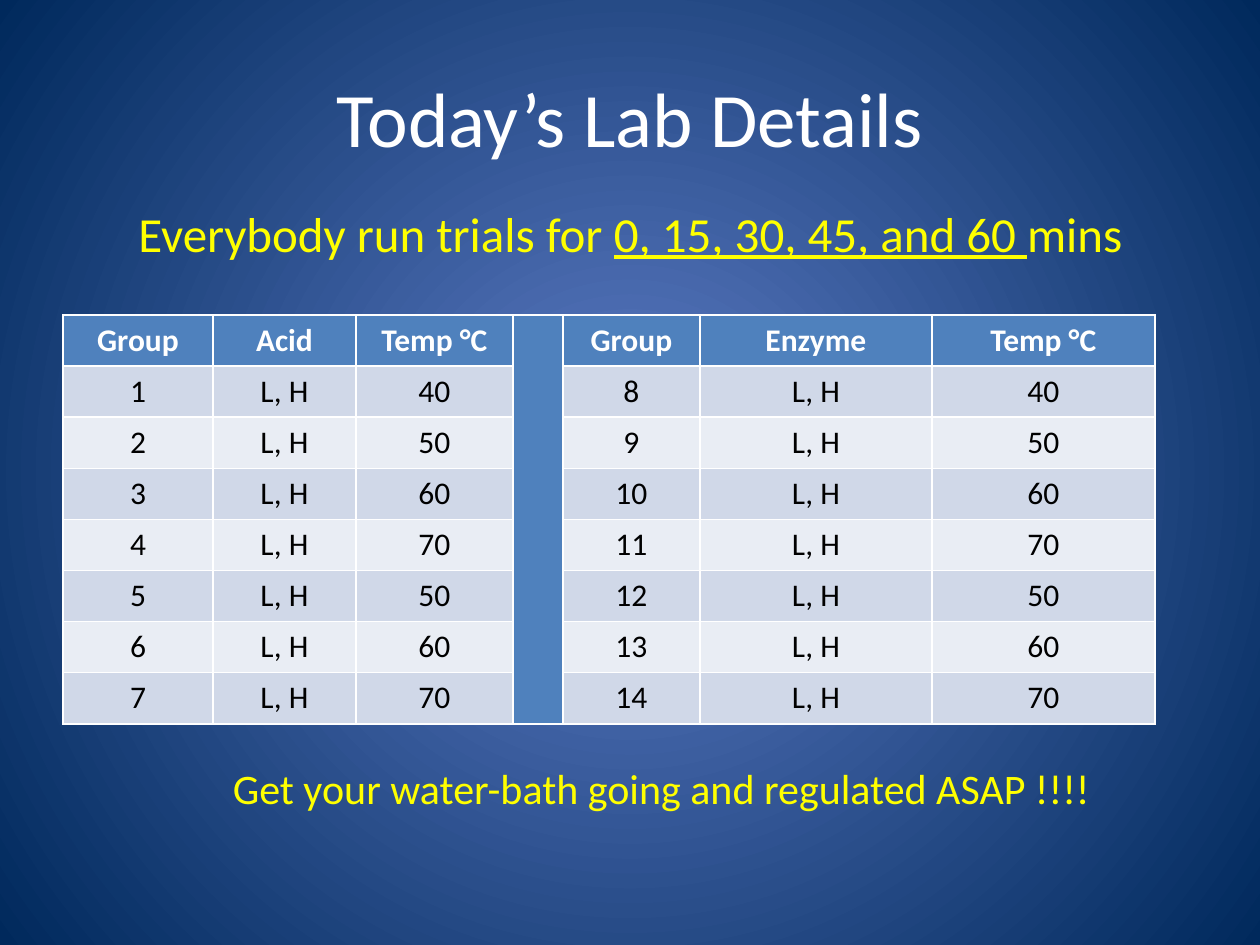
"""Build the lab details slide with its group table and two reminders."""
from lxml import etree
from pptx import Presentation
from pptx import util as u
from pptx.dml.color import RGBColor
from pptx.enum import text
from pptx.oxml import ns

WHITE = RGBColor(0xFF, 0xFF, 0xFF)
BLACK = RGBColor(0x00, 0x00, 0x00)
YELLOW = RGBColor(0xFF, 0xFF, 0x00)
HEADER_BLUE = RGBColor(0x4F, 0x81, 0xBD)
BANDS = (RGBColor(0xD0, 0xD8, 0xE8), RGBColor(0xE9, 0xED, 0xF4))
GLOW = (RGBColor(0x5E, 0x7C, 0xC5), RGBColor(0x00, 0x29, 0x5C))

TITLE = "Today’s Lab Details"
HEADERS = ("Group", "Acid", "Temp °C", "", "Group", "Enzyme", "Temp °C")
TEMPERATURES = (40, 50, 60, 70, 50, 60, 70)
SAMPLES = "L, H"
DIVIDER = HEADERS.index("")
COLUMN_WIDTHS = (85.7, 81.7, 89.7, 28.6, 78.3, 132.6, 127.4)
ROW_HEIGHT = 29.16
REMINDERS = (
    ((72, 112.5, 591, 41), 28, (("Everybody run trials for ", False),
                                ("0, 15, 30, 45, and 60 ", True), ("mins", False))),
    ((126, 432, 510, 36), 24, (("Get your water-bath going and regulated ASAP !!!!", False),)),
)


def add_run(paragraph, words, **formats):
    run = paragraph.add_run()
    run.text = words
    run.font.color.rgb = formats.pop("color")
    for name, value in {"name": "Calibri", **formats}.items():
        setattr(run.font, name, value)


def paint_background(slide):
    fill = slide.background.fill
    fill.gradient()
    for stop, color, position in zip(fill.gradient_stops, GLOW, (0, 1)):
        stop.color.rgb = color
        stop.position = position
    gradient = slide.element.find(".//" + ns.qn("a:gradFill"))
    gradient.remove(gradient.find(ns.qn("a:lin")))
    circle = etree.SubElement(gradient, ns.qn("a:path"), path="circle")
    etree.SubElement(circle, ns.qn("a:fillToRect"), dict.fromkeys("ltrb", "50000"))


def add_groups(slide):
    count = len(TEMPERATURES)
    rows = [HEADERS] + [
        (group, SAMPLES, degrees, "", group + count, SAMPLES, degrees)
        for group, degrees in enumerate(TEMPERATURES, 1)]
    frame = slide.shapes.add_table(
        len(rows), len(HEADERS), u.Pt(36), u.Pt(180),
        u.Pt(sum(COLUMN_WIDTHS)), u.Pt(ROW_HEIGHT * len(rows)))
    table = frame.table
    for column, width in zip(table.columns, COLUMN_WIDTHS):
        column.width = u.Pt(width)
    for row_index, values in enumerate(rows):
        is_header = row_index == 0
        table.rows[row_index].height = u.Pt(ROW_HEIGHT)
        for column_index, value in enumerate(values):
            cell = table.cell(row_index, column_index)
            cell.fill.solid()
            blue = is_header or column_index == DIVIDER
            cell.fill.fore_color.rgb = HEADER_BLUE if blue else BANDS[(row_index - 1) % 2]
            if column_index == DIVIDER:
                continue
            paragraph = cell.text_frame.paragraphs[0]
            paragraph.alignment = text.PP_ALIGN.CENTER
            add_run(paragraph, str(value), size=u.Pt(18), bold=is_header,
                    color=WHITE if is_header else BLACK)
    table.cell(0, DIVIDER).merge(table.cell(len(rows) - 1, DIVIDER))


def add_reminder(slide, box, size, parts):
    shape = slide.shapes.add_textbox(*map(u.Pt, box))
    frame = shape.text_frame
    frame.word_wrap = False
    frame.auto_size = text.MSO_AUTO_SIZE.SHAPE_TO_FIT_TEXT
    for words, underline in parts:
        add_run(frame.paragraphs[0], words, size=u.Pt(size), color=YELLOW, underline=underline)


def main():
    presentation = Presentation()
    presentation.slide_width, presentation.slide_height = u.Pt(720), u.Pt(540)
    slide = presentation.slides.add_slide(presentation.slide_layouts[5])
    paint_background(slide)
    title = slide.shapes.title
    placement = {"left": 36, "top": 21.6, "width": 648, "height": 90}
    for name, value in placement.items():
        setattr(title, name, u.Pt(value))
    title.text_frame.vertical_anchor = text.MSO_ANCHOR.MIDDLE
    paragraph = title.text_frame.paragraphs[0]
    paragraph.alignment = text.PP_ALIGN.CENTER
    add_run(paragraph, TITLE, size=u.Pt(44), color=WHITE)
    add_groups(slide)
    for reminder in REMINDERS:
        add_reminder(slide, *reminder)
    presentation.save("out.pptx")


if __name__ == "__main__":
    main()
